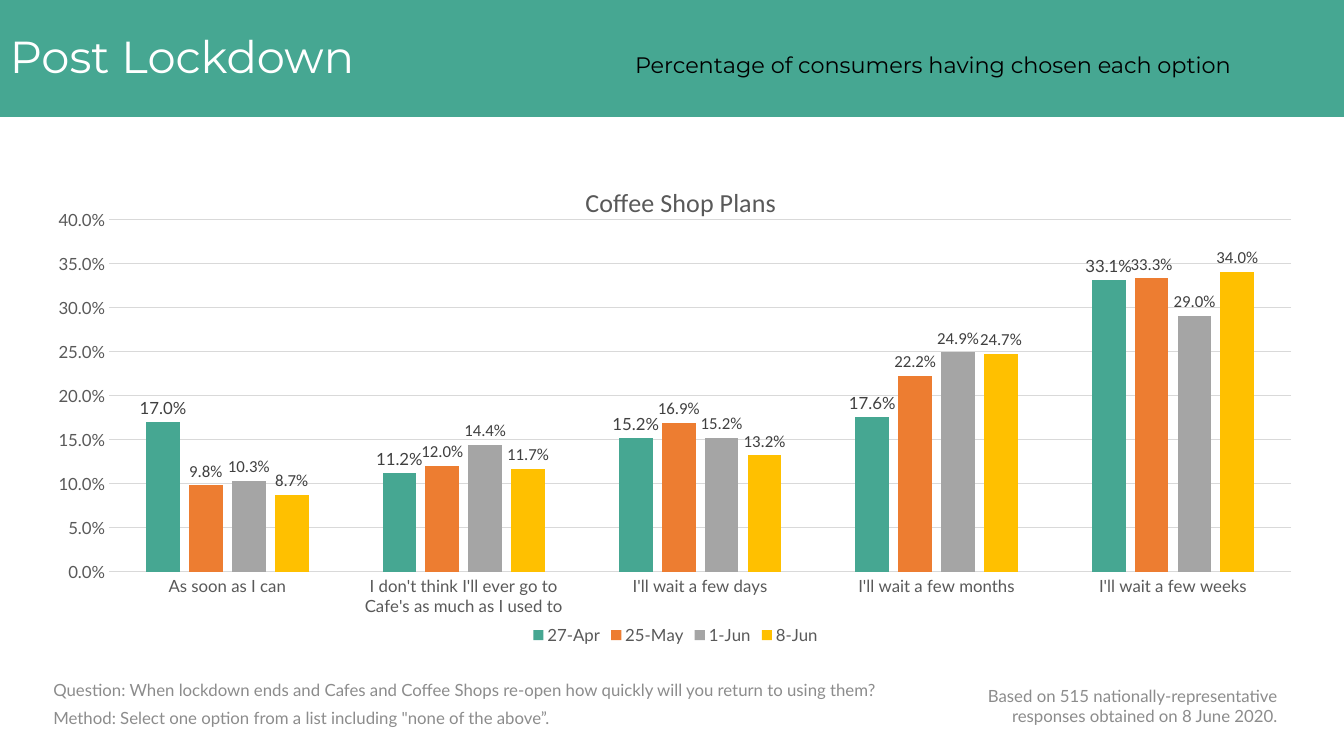
from lxml.etree import SubElement
from pptx import Presentation
from pptx.chart.data import CategoryChartData
from pptx.dml.color import RGBColor
from pptx.enum.chart import XL_CHART_TYPE, XL_LABEL_POSITION, XL_LEGEND_POSITION, XL_TICK_MARK
from pptx.enum.shapes import MSO_SHAPE
from pptx.enum.text import MSO_ANCHOR, PP_ALIGN
from pptx.oxml import parse_xml
from pptx.oxml.ns import nsdecls, qn
from pptx.util import Inches, Pt

GREEN, GREY, DARK, RULE = "46A792", "595959", "404040", "D9D9D9"
CATEGORIES = [
    "As soon as I can",
    "I don't think I'll ever go to Cafe's as much as I used to",
    "I'll wait a few days",
    "I'll wait a few months",
    "I'll wait a few weeks",
]
WAVES = [
    ("27-Apr", GREEN, "Lato", (0.17, 0.112, 0.152, 0.176, 0.331)),
    ("25-May", "ED7D31", "Calibri", (0.098, 0.12, 0.169, 0.222, 0.333)),
    ("1-Jun", "A5A5A5", "Calibri", (0.103, 0.144, 0.152, 0.249, 0.29)),
    ("8-Jun", "FFC000", "Calibri", (0.087, 0.117, 0.132, 0.247, 0.34)),
]
NOTES = [
    ("Question: When lockdown ends and Cafes and Coffee Shops re-open "
     "how quickly will you return to using them?", (3.23, 88.53, 71.49, 5.33), PP_ALIGN.LEFT),
    ('Method: Select one option from a list including "none of the above”.',
     (3.23, 92.27, 71.49, 5.33), PP_ALIGN.LEFT),
    ("Based on 515 nationally-representative responses obtained on 8 June 2020.",
     (69.92, 90.67, 25.88, 5.33), PP_ALIGN.RIGHT),
]


def colour(code):
    """Turn a hex string into a colour."""
    return RGBColor.from_string(code)


def style(font, size=12, face="Lato", ink=GREY):
    """Set the size, face and colour of a font."""
    font.size, font.name, font.bold = Pt(size), face, False
    font.color.rgb = colour(ink)


def write(para, text, **format):
    """Add a styled span of text to a paragraph."""
    span = para.add_run()
    span.text = text
    style(span.font, **format)


def arrange(node, position, **shares):
    """Give a chart part a manual layout in shares of the chart."""
    for old in node.findall(qn("c:layout")):
        node.remove(old)
    layout = parse_xml(f"<c:layout {nsdecls('c')}><c:manualLayout/></c:layout>")
    for tag, value in shares.items():
        SubElement(layout[0], qn(f"c:{tag}")).set("val", str(value))
    node.insert(position, layout)


class Page:
    """Hold the deck, the current slide and its percentage grid."""

    def __init__(self, deck):
        """Add a blank slide to the deck."""
        self.deck = deck
        self.shapes = deck.slides.add_slide(deck.slide_layouts[6]).shapes

    def place(self, left, top, width, height):
        """Convert percentages of the slide to lengths."""
        across, down = self.deck.slide_width / 100, self.deck.slide_height / 100
        return int(left * across), int(top * down), int(width * across), int(height * down)

    def banner(self, area, title, subtitle, tab):
        """Draw the heading band with its title and tabbed subtitle."""
        box = self.shapes.add_shape(MSO_SHAPE.RECTANGLE, *self.place(*area))
        box.shadow.inherit = False
        box.fill.solid()
        box.fill.fore_color.rgb = colour(GREEN)
        box.line.fill.background()
        box.text_frame.vertical_anchor = MSO_ANCHOR.MIDDLE
        para = box.text_frame.paragraphs[0]
        tabs = SubElement(para._p.get_or_add_pPr(), qn("a:tabLst"))
        SubElement(tabs, qn("a:tab"), pos=str(Inches(tab)), algn="l")
        para.alignment, para.line_spacing = PP_ALIGN.LEFT, 0.9
        write(para, title + "\t", size=32, face="Montserrat", ink="FFFFFF")
        write(para, subtitle, size=16, face="Montserrat", ink="000000")

    def note(self, text, area, align):
        """Add a small grey note."""
        frame = self.shapes.add_textbox(*self.place(*area)).text_frame
        frame.word_wrap, frame.vertical_anchor = True, MSO_ANCHOR.MIDDLE
        frame.paragraphs[0].alignment = align
        write(frame.paragraphs[0], text, ink="8C8C8C")

    def columns(self, area, title):
        """Add the clustered column chart of all survey waves."""
        data = CategoryChartData(number_format="0.0%")
        data.categories = CATEGORIES
        for name, _, _, values in WAVES:
            data.add_series(name, values)
        chart = self.shapes.add_chart(
            XL_CHART_TYPE.COLUMN_CLUSTERED, *self.place(*area), data).chart
        style(chart.font, size=10, face="Calibri", ink="000000")
        write(chart.chart_title.text_frame.paragraphs[0], title, size=18.6, face="Calibri")
        chart.chart_title.include_in_layout = False
        arrange(chart.chart_title._element, 1, xMode="edge", yMode="edge", x=0.425, y=0.045)
        arrange(chart._chartSpace.chart.plotArea, 0, layoutTarget="inner", xMode="edge",
                yMode="edge", x=0.052, y=0.126, w=0.935, h=0.717)
        chart.has_legend = True
        chart.legend.position = XL_LEGEND_POSITION.BOTTOM
        chart.legend.include_in_layout = False
        style(chart.legend.font)
        self.axes(chart.category_axis, chart.value_axis)
        plot = chart.plots[0]
        plot.gap_width, plot.overlap, plot.vary_by_categories = 219, -27, False
        for series, (_, fill, face, _) in zip(plot.series, WAVES):
            series.format.fill.solid()
            series.format.fill.fore_color.rgb = colour(fill)
            labels = series.data_labels
            labels.show_value, labels.position = True, XL_LABEL_POSITION.OUTSIDE_END
            labels.number_format, labels.number_format_is_linked = "0.0%", False
            style(labels.font, face=face, ink=DARK)

    def axes(self, category, value):
        """Style both axes and the gridlines."""
        for axis in (category, value):
            axis.major_tick_mark = axis.minor_tick_mark = XL_TICK_MARK.NONE
            style(axis.tick_labels.font)
        for line in (category.format.line, value.major_gridlines.format.line):
            line.width, line.color.rgb = Pt(0.75), colour(RULE)
        value.format.line.fill.background()
        value.minimum_scale, value.maximum_scale, value.major_unit = 0, 0.4, 0.05
        value.tick_labels.number_format = "0.0%"
        value.tick_labels.number_format_is_linked = False


def main():
    """Build the slide and save it."""
    deck = Presentation()
    deck.slide_width, deck.slide_height = Inches(13.33), Inches(7.5)
    page = Page(deck)
    page.banner((0, 0, 100, 15.47), "Post Lockdown",
                "Percentage of consumers having chosen each option", tab=6.2)
    page.columns((3.23, 20.8, 94.07, 65.07), "Coffee Shop Plans")
    for text, area, align in NOTES:
        page.note(text, area, align)
    deck.save("out.pptx")


if __name__ == "__main__":
    main()
